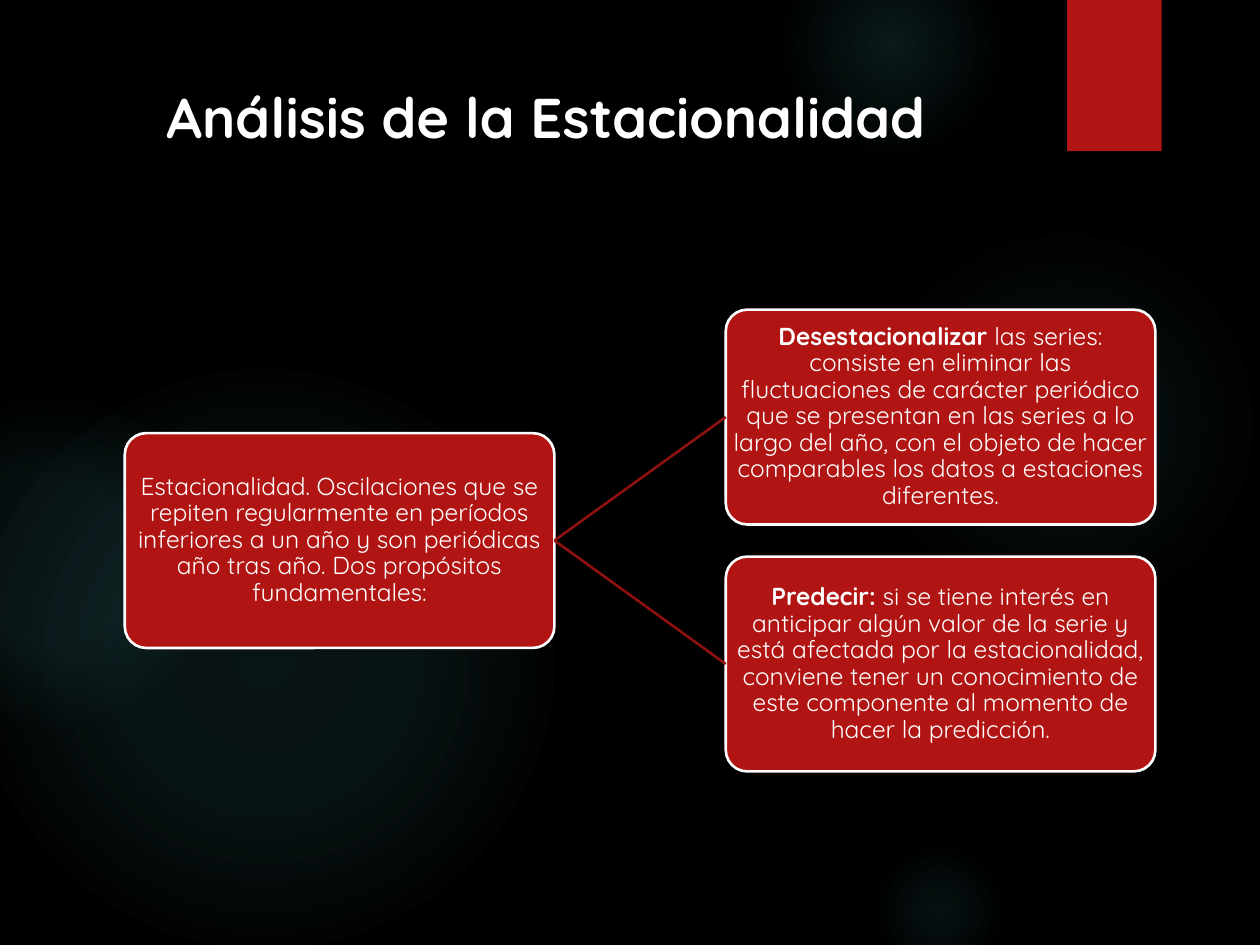
from lxml.etree import SubElement
from pptx import Presentation
from pptx.dml.color import RGBColor
from pptx.enum.shapes import MSO_CONNECTOR, MSO_SHAPE
from pptx.enum.text import MSO_ANCHOR, PP_ALIGN
from pptx.oxml import parse_xml
from pptx.oxml.ns import nsdecls, qn
from pptx.util import Inches, Pt

COLORS = {k: RGBColor.from_string(v) for k, v in {
    "back": "000000", "glow": "50B9C1", "red": "B01513",
    "link": "8D110F", "white": "FFFFFF"}.items()}

prs = Presentation()
prs.slide_width, prs.slide_height = Inches(10), Inches(7.5)
W, H = prs.slide_width, prs.slide_height
s = prs.slides.add_slide(prs.slide_layouts[5])
s.background.fill.solid()
s.background.fill.fore_color.rgb = COLORS["back"]


def add_box(kind, x, y, w, h, color=None):
    sp = s.shapes.add_shape(kind, int(x), int(y), int(w), int(h))
    sp.shadow.inherit = False
    sp.line.fill.background()
    if color:
        sp.fill.solid()
        sp.fill.fore_color.rgb = COLORS[color]
    return sp


def add_run(p, text, size, bold):
    r = p.add_run()
    r.text = text
    for name, value in {"name": "Quicksand", "size": Pt(size), "bold": bold}.items():
        setattr(r.font, name, value)
    r.font.color.rgb = COLORS["white"]


GLOWS = [
    (0.69, 0.24, 0.31, [(0, 7), (36, 6), (69, 0)]),
    (0.62, -0.07, 0.175, [(0, 14), (36, 7), (73, 0)]),
    (0.69, 0.89, 0.11, [(0, 9), (36, 5), (66, 0)]),
    (-0.02, 0.39, 0.46, [(0, 11), (36, 10), (75, 0)]),
    (-0.09, 0.42, 0.26, [(0, 8), (36, 8), (72, 0)]),
]
for x, y, size, stops in GLOWS:
    sp = add_box(MSO_SHAPE.OVAL, W * x, H * y, W * size, W * size)
    grad = parse_xml(f'<a:gradFill {nsdecls("a")}><a:gsLst/><a:path path="circle">'
                     '<a:fillToRect l="50000" t="50000" r="50000" b="50000"/>'
                     '</a:path></a:gradFill>')
    for pos, alpha in stops:
        gs = SubElement(grad[0], qn("a:gs"), pos=str(pos * 1000))
        clr = SubElement(gs, qn("a:srgbClr"), val=str(COLORS["glow"]))
        SubElement(clr, qn("a:alpha"), val=str(alpha * 1000))
    sp._element.spPr.find(qn("a:prstGeom")).addnext(grad)

add_box(MSO_SHAPE.RECTANGLE, W * 0.847, 0, W * 0.075, H * 0.16, "red")

CARD_W, CARD_H = W * 0.341, W * 0.1705
LEFT, RIGHT = W * 0.099, W * 0.576
MIDDLE, PITCH = H * 0.572, W * 0.196
CARDS = [
    (LEFT, 0, "", "Estacionalidad. Oscilaciones que se repiten regularmente en períodos "
     "inferiores a un año y son periódicas año tras año. Dos propósitos fundamentales:"),
    (RIGHT, -0.5, "Desestacionalizar", " las series: consiste en eliminar las fluctuaciones "
     "de carácter periódico que se presentan en las series a lo largo del año, con el objeto "
     "de hacer comparables los datos a estaciones diferentes."),
    (RIGHT, 0.5, "Predecir:", " si se tiene interés en anticipar algún valor de la serie y "
     "está afectada por la estacionalidad, conviene tener un conocimiento de este componente "
     "al momento de hacer la predicción."),
]
cards = []
for x, row, lead, text in CARDS:
    sp = add_box(MSO_SHAPE.ROUNDED_RECTANGLE, x, MIDDLE + row * PITCH - CARD_H / 2,
                 CARD_W, CARD_H, "red")
    sp.adjustments[0] = 0.1
    sp.line.color.rgb = COLORS["white"]
    sp.line.width = Pt(1.5)
    tf = sp.text_frame
    for name in ("margin_left", "margin_top", "margin_right", "margin_bottom"):
        setattr(tf, name, Inches(0.01))
    tf.word_wrap, tf.vertical_anchor = True, MSO_ANCHOR.MIDDLE
    p = tf.paragraphs[0]
    p.alignment, p.line_spacing = PP_ALIGN.CENTER, 0.9
    if lead:
        add_run(p, lead, 14, True)
    add_run(p, text, 14, False)
    cards.append(sp)

for card in cards[1:]:
    link = s.shapes.add_connector(MSO_CONNECTOR.STRAIGHT, 0, 0, 0, 0)
    link.begin_connect(cards[0], 3)
    link.end_connect(card, 1)
    link.line.color.rgb = COLORS["link"]
    link.line.width = Pt(1.5)
    SubElement(link._element.spPr, qn("a:effectLst"))

title = s.shapes.title
for name, value in {"left": W * 0.122, "top": H * 0.08,
                    "width": W * 0.669, "height": H * 0.085}.items():
    setattr(title, name, int(value))
tf = title.text_frame
tf.word_wrap, tf.vertical_anchor = True, MSO_ANCHOR.MIDDLE
p = tf.paragraphs[0]
p.alignment = PP_ALIGN.LEFT
add_run(p, "Análisis de la Estacionalidad", 32, True)
s.shapes._spTree.append(title._element)

prs.save("out.pptx")
